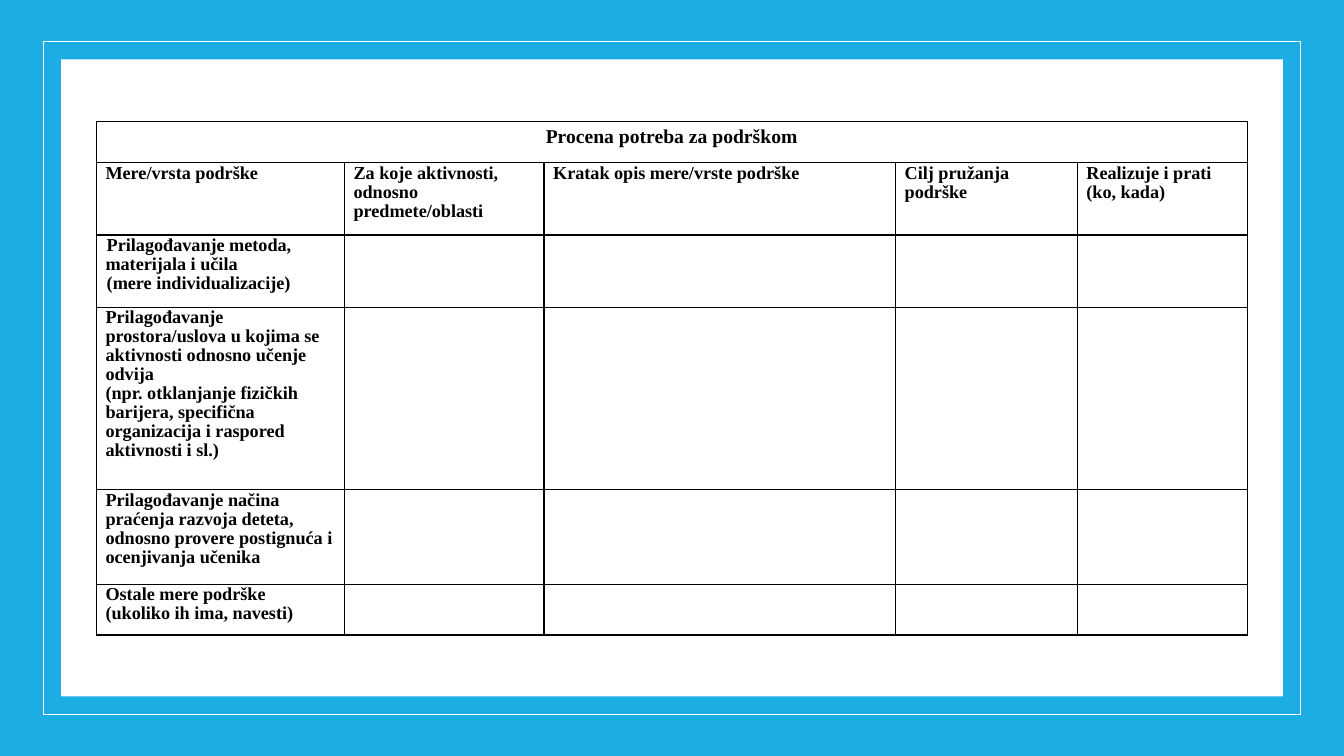
from lxml import etree
from pptx import Presentation
from pptx.dml.color import RGBColor
from pptx.enum.shapes import MSO_SHAPE
from pptx.enum.text import PP_ALIGN
from pptx.oxml.ns import qn
from pptx.util import Cm, Pt

RECTANGLE = MSO_SHAPE.RECTANGLE
CENTER = PP_ALIGN.CENTER
BLANK_LAYOUT = 6

SLIDE_WIDTH, SLIDE_HEIGHT = 33.87, 19.05
BLUE, WHITE, BLACK = "1CADE4", "FFFFFF", "000000"
FONT = "Times New Roman"

COLUMN_WIDTHS = [6.25, 5.03, 8.86, 4.58, 4.28]
ROW_HEIGHTS = [1.04, 1.82, 1.82, 4.6, 2.39, 1.27]
TITLE = "Procena potreba za podrškom"
HEADERS = [
    "Mere/vrsta podrške",
    "Za koje aktivnosti, odnosno predmete/oblasti",
    "Kratak opis mere/vrste podrške",
    "Cilj pružanja podrške",
    "Realizuje i prati (ko, kada)",
]
MEASURES = [
    "Prilagođavanje metoda, materijala i učila\n(mere individualizacije)",
    "Prilagođavanje prostora/uslova u kojima se aktivnosti odnosno učenje odvija\n"
    "(npr. otklanjanje fizičkih barijera, specifična organizacija i raspored aktivnosti i sl.)",
    "Prilagođavanje načina praćenja razvoja deteta, odnosno provere postignuća i ocenjivanja učenika",
    "Ostale mere podrške\n(ukoliko ih ima, navesti)",
]


def color(value):
    return RGBColor.from_string(value)


def add_rectangle(slide, box, fill=None, line=None):
    shape = slide.shapes.add_shape(RECTANGLE, *(Cm(length) for length in box))
    shape.shadow.inherit = False
    if fill:
        shape.fill.solid()
        shape.fill.fore_color.rgb = color(fill)
    else:
        shape.fill.background()
    if line:
        shape.line.color.rgb = color(line)
        shape.line.width = Pt(0.5)
    else:
        shape.line.fill.background()


def add_frame(slide, width, height):
    """Blue backdrop with a thin white outline around a white panel."""
    def inset(x, y):
        return x, y, width - 2 * x, height - 2 * y

    add_rectangle(slide, inset(0, 0), fill=BLUE)
    add_rectangle(slide, inset(1.09, 1.04), line=WHITE)
    add_rectangle(slide, inset(1.54, 1.5), fill=WHITE)


def set_borders(cell):
    properties = cell._tc.get_or_add_tcPr()
    for side in ("a:lnL", "a:lnR", "a:lnT", "a:lnB"):
        line = etree.SubElement(properties, qn(side), w=str(Pt(1)))
        fill = etree.SubElement(line, qn("a:solidFill"))
        etree.SubElement(fill, qn("a:srgbClr"), val=BLACK)


def set_margins(cell, side, top, bottom):
    cell.margin_left = cell.margin_right = Cm(side)
    cell.margin_top, cell.margin_bottom = Cm(top), Cm(bottom)


def write_cell(cell, text, size=13, alignment=None, indent=0):
    cell.text = text
    for paragraph in cell.text_frame.paragraphs:
        paragraph.alignment = alignment
        paragraph.line_spacing = 0.95
        font = paragraph.font
        font.name, font.size, font.bold = FONT, Pt(size), True
        font.color.rgb = color(BLACK)
        if indent:
            paragraph._p.get_or_add_pPr().set("indent", str(Cm(indent)))


def add_support_table(slide, left, top):
    frame = slide.shapes.add_table(
        len(ROW_HEIGHTS), len(COLUMN_WIDTHS), Cm(left), Cm(top),
        Cm(sum(COLUMN_WIDTHS)), Cm(sum(ROW_HEIGHTS)))
    table = frame.table
    table.first_row = table.horz_banding = False
    for column, width in zip(table.columns, COLUMN_WIDTHS):
        column.width = Cm(width)
    for row, height in zip(table.rows, ROW_HEIGHTS):
        row.height = Cm(height)
    for cell in table.iter_cells():
        set_borders(cell)
        cell.fill.background()
        set_margins(cell, 0.23, 0.03, 0)

    title_cell = table.cell(0, 0)
    title_cell.merge(table.cell(0, len(COLUMN_WIDTHS) - 1))
    set_margins(title_cell, 0.3, 0.15, 0.15)
    write_cell(title_cell, TITLE, size=14, alignment=CENTER)
    for column, header in enumerate(HEADERS):
        write_cell(table.cell(1, column), header)
    for row, measure in enumerate(MEASURES, start=2):
        write_cell(table.cell(row, 0), measure, indent=0.03 if row == 2 else 0)


def main():
    presentation = Presentation()
    presentation.slide_width = Cm(SLIDE_WIDTH)
    presentation.slide_height = Cm(SLIDE_HEIGHT)
    slide = presentation.slides.add_slide(presentation.slide_layouts[BLANK_LAYOUT])
    add_frame(slide, SLIDE_WIDTH, SLIDE_HEIGHT)
    add_support_table(slide, left=2.43, top=3.06)
    presentation.save("out.pptx")


if __name__ == "__main__":
    main()
